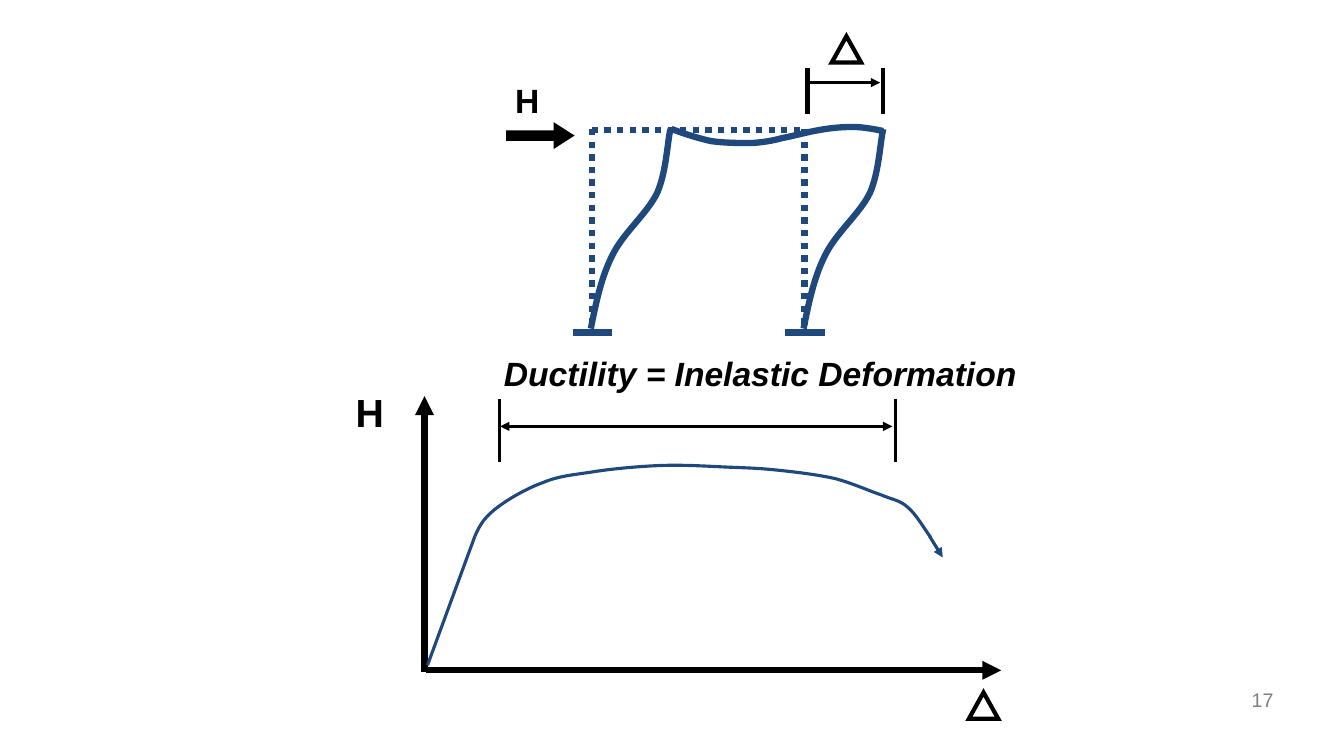
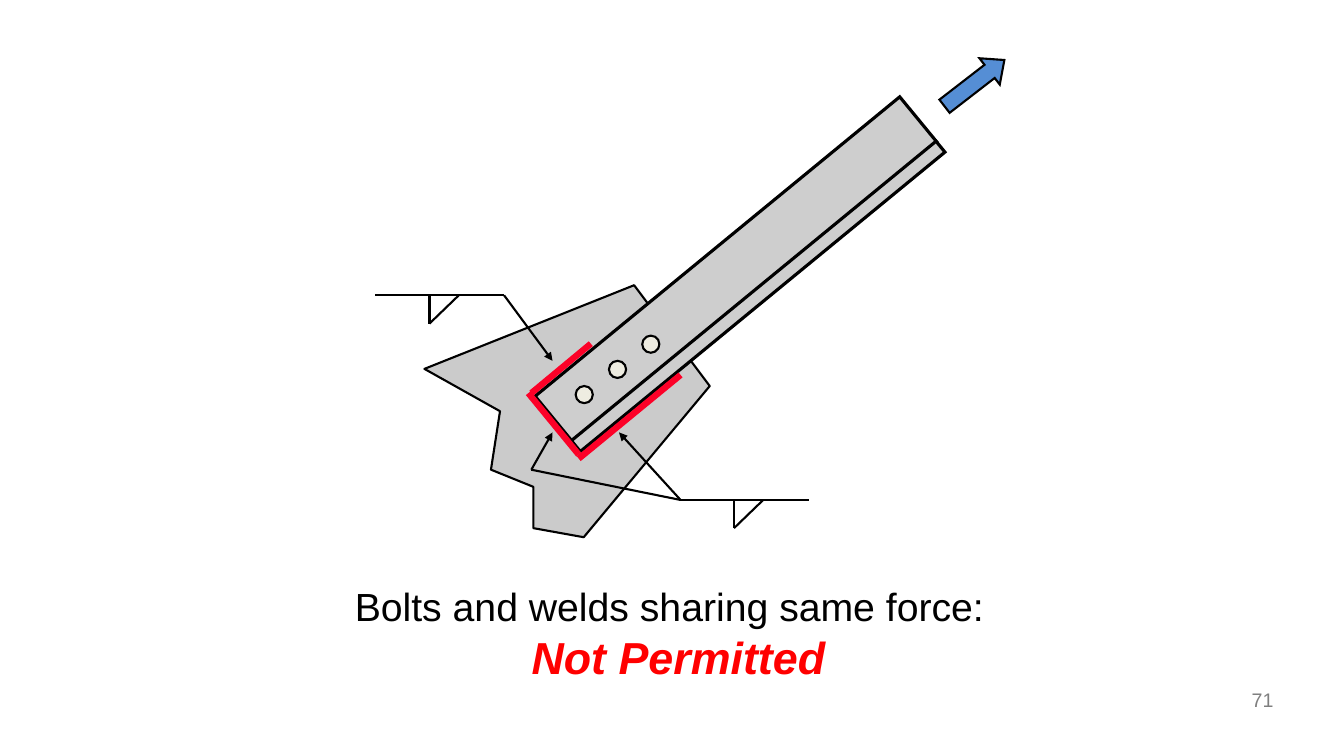
from lxml import etree
from pptx import Presentation
from pptx.dml.color import RGBColor
from pptx.enum.dml import MSO_LINE
from pptx.enum.shapes import MSO_CONNECTOR, MSO_SHAPE
from pptx.enum.text import MSO_ANCHOR, PP_ALIGN
from pptx.oxml.ns import qn
from pptx.util import Inches, Pt

STRAIGHT = MSO_CONNECTOR.STRAIGHT
RECT, OVAL = MSO_SHAPE.RECTANGLE, MSO_SHAPE.OVAL
DELTA, ARROW = MSO_SHAPE.ISOSCELES_TRIANGLE, MSO_SHAPE.RIGHT_ARROW
DOTS = MSO_LINE.ROUND_DOT
TOP, MIDDLE = MSO_ANCHOR.TOP, MSO_ANCHOR.MIDDLE
LEFT, CENTER, RIGHT = PP_ALIGN.LEFT, PP_ALIGN.CENTER, PP_ALIGN.RIGHT

BLACK = RGBColor(0x00, 0x00, 0x00)
NAVY = RGBColor(0x1F, 0x49, 0x7D)
BLUE = RGBColor(0x55, 0x8E, 0xD5)
PLATE = RGBColor(0xCB, 0xCB, 0xCB)
STEEL = RGBColor(0xCE, 0xCE, 0xCE)
CREAM = RGBColor(0xEE, 0xEC, 0xE1)
WELD = RGBColor(0xFC, 0x01, 0x28)
RED = RGBColor(0xFF, 0x00, 0x00)
GRAY = RGBColor(0x7F, 0x7F, 0x7F)

# Pens: colour and width in points
FRAME, CURVE, SEAM = (NAVY, 4.5), (NAVY, 2.25), (WELD, 4.5)
AXIS, BOLD, MID, THIN = (BLACK, 4.5), (BLACK, 3), (BLACK, 2.25), (BLACK, 1.5)


class Deck:
    font = "Arial"

    def __init__(self):
        self.prs = Presentation()
        self.prs.slide_width, self.prs.slide_height = Inches(13.33), Inches(7.5)
        self.shapes = None

    def page(self, number):
        self.shapes = self.prs.slides.add_slide(self.prs.slide_layouts[6]).shapes
        self.text((9.62, 6.74, 3.11, 0.4), [(number, 14, GRAY, {}, RIGHT)], MIDDLE)

    def text(self, box, rows, anchor=TOP):
        """Add a text box; each row is words, size, colour, style, alignment."""
        frame = self.shapes.add_textbox(*map(Inches, box)).text_frame
        frame.word_wrap, frame.vertical_anchor = True, anchor
        for i, (words, size, color, style, align) in enumerate(rows):
            para = frame.add_paragraph() if i else frame.paragraphs[0]
            para.text, para.alignment = words, align
            values = {"name": self.font, "size": Pt(size), **style}
            for key, value in values.items():
                setattr(para.font, key, value)
            para.font.color.rgb = color

    def stroke(self, item, pen, extras=()):
        """Set the pen, then append extra line elements in schema order."""
        item.line.color.rgb, item.line.width = pen[0], Pt(pen[1])
        for tag, values in extras:
            etree.SubElement(item.line._get_or_add_ln(), qn(tag), values)

    def line(self, start, end, pen, ends="", dash=None):
        """Draw a line; ends holds 'h' and 't' for head and tail arrows."""
        item = self.shapes.add_connector(STRAIGHT, *map(Inches, (*start, *end)))
        if dash:
            item.line.dash_style = dash
        tags = {"h": "a:headEnd", "t": "a:tailEnd"}
        self.stroke(item, pen, [(tags[e], {"type": "triangle"}) for e in ends])
        etree.SubElement(item.element.spPr, qn("a:effectLst"))

    def paint(self, item, fill, pen, join):
        item.shadow.inherit = False
        if fill is None:
            item.fill.background()
        else:
            item.fill.solid()
            item.fill.fore_color.rgb = fill
        self.stroke(item, pen, [join])

    def shape(self, kind, box, fill, pen, turn=0, adj=()):
        item = self.shapes.add_shape(kind, *map(Inches, box))
        item.rotation = turn
        for i, value in enumerate(adj):
            item.adjustments[i] = value
        self.paint(item, fill, pen, ("a:miter", {"lim": "800000"}))

    def outline(self, points, pen, fill=None):
        spots = [(Inches(x), Inches(y)) for x, y in points]
        maker = self.shapes.build_freeform(*spots[0])
        maker.add_line_segments(spots[1:], close=fill is not None)
        item = maker.convert_to_shape()
        self.paint(item, fill, pen, ("a:round", {}))
        return item

    def curve(self, points, pen):
        """Draw cubic curves: a start point, then three points per curve."""
        steps = list(self.outline(points, pen).element.iter(qn("a:lnTo")))
        for i in range(0, len(steps), 3):
            bend = etree.Element(qn("a:cubicBezTo"))
            steps[i].addprevious(bend)
            for step in steps[i:i + 3]:
                bend.append(step[0])
                step.getparent().remove(step)

    def delta(self, x, y):
        self.shape(DELTA, (x, y, 0.29, 0.26), None, BOLD)

    def fillet(self, x, y):
        """Draw a weld symbol with its reference line starting at x, y."""
        self.line((x, y), (x + 1.28, y), THIN)
        self.line((x + 0.54, y), (x + 0.54, y + 0.28), THIN)
        self.line((x + 0.54, y + 0.28), (x + 0.83, y), THIN)


def sway(deck):
    """Draw the swaying frame and its load."""
    span = 2.11
    for dx in (0, span):
        deck.line((5.87 + dx, 1.28), (5.87 + dx, 3.31), FRAME, dash=DOTS)
    deck.line((5.87, 1.29), (5.87 + span, 1.29), FRAME, dash=DOTS)
    column = [(5.86, 3.26), (5.91, 3.01), (5.96, 2.76), (6.07, 2.54),
              (6.18, 2.31), (6.42, 2.12), (6.52, 1.91),
              (6.61, 1.7), (6.62, 1.4), (6.65, 1.28)]
    for dx in (0, span):
        deck.line((5.68 + dx, 3.3), (6.07 + dx, 3.3), FRAME)
        deck.curve([(x + dx, y) for x, y in column], FRAME)
    deck.curve([(6.66, 1.28), (6.79, 1.33), (6.92, 1.37), (7.05, 1.4),
                (7.19, 1.42), (7.34, 1.42), (7.46, 1.42),
                (7.58, 1.41), (7.65, 1.4), (7.76, 1.37),
                (7.87, 1.35), (8.01, 1.31), (8.13, 1.29),
                (8.24, 1.27), (8.35, 1.26), (8.46, 1.26),
                (8.57, 1.26), (8.71, 1.29), (8.76, 1.3)], FRAME)
    for x in (8.01, 8.76):
        deck.line((x, 0.67), (x, 1.13), BOLD)
    deck.line((8.01, 0.82), (8.73, 0.82), MID, "t")
    deck.delta(8.25, 0.36)
    deck.shape(ARROW, (5.04, 1.25, 0.62, 0.19), BLACK, BOLD, adj=(0.33, 0.78))
    deck.text((5.01, 0.74, 0.66, 0.51), [("H", 24, BLACK, {"bold": True}, LEFT)])


def graph(deck):
    """Draw the load and displacement curve."""
    deck.line((4.23, 6.65), (9.93, 6.65), AXIS, "t")
    deck.line((4.21, 6.67), (4.21, 3.93), AXIS, "t")
    deck.text((3.43, 3.8, 0.66, 0.57), [("H", 28, BLACK, {"bold": True}, LEFT)])
    deck.delta(9.61, 6.87)
    deck.line((4.24, 6.6), (4.71, 5.32), CURVE)
    deck.curve([(4.71, 5.32), (4.75, 5.23), (4.79, 5.15), (4.9, 5.06),
                (5.01, 4.97), (5.21, 4.85), (5.38, 4.79),
                (5.54, 4.72), (5.7, 4.71), (5.89, 4.68),
                (6.08, 4.65), (6.31, 4.63), (6.51, 4.62),
                (6.72, 4.61), (6.92, 4.62), (7.12, 4.63),
                (7.31, 4.64), (7.47, 4.64), (7.67, 4.66),
                (7.87, 4.68), (8.12, 4.71), (8.29, 4.75),
                (8.47, 4.8), (8.62, 4.87), (8.74, 4.91),
                (8.86, 4.96), (8.92, 4.96), (9, 5.03),
                (9.08, 5.09), (9.19, 5.28), (9.23, 5.33)], CURVE)
    deck.line((9.22, 5.32), (9.35, 5.53), CURVE, "t")
    for x in (4.95, 8.88):
        deck.line((x, 4.58), (x, 3.96), MID)
    deck.line((4.96, 4.23), (8.85, 4.23), MID, "ht")
    deck.text((4.9, 3.45, 6.23, 0.5), [("Ductility = Inelastic Deformation", 24,
              BLACK, {"bold": True, "italic": True}, LEFT)])


def joint(deck):
    """Draw the brace joined to its plate by bolts and welds."""
    deck.outline([(7.04, 3.83), (6.29, 2.83), (4.21, 3.66), (4.96, 4.08),
                  (4.87, 4.66), (5.29, 4.83), (5.29, 5.24), (5.79, 5.33)],
                 THIN, PLATE)
    for box in ((4.96, 2.38, 4.68, 0.58), (5.18, 2.87, 4.68, 0.14)):
        deck.shape(RECT, box, STEEL, MID, 320.6)
    deck.shape(ARROW, (9.29, 0.66, 0.75, 0.33), BLUE, THIN, 322.3, (0.5, 0.56))
    for i in range(3):
        bolt = (5.71 + 0.33 * i, 3.83 - 0.25 * i, 0.17, 0.17)
        deck.shape(OVAL, bolt, CREAM, THIN)
    for start, end in (((5.86, 3.41), (5.27, 3.9)), ((5.24, 3.9), (5.74, 4.51)),
                       ((6.75, 3.72), (5.74, 4.55))):
        deck.line(start, end, SEAM)
    deck.fillet(6.74, 4.96)
    deck.line((6.75, 4.96), (6.14, 4.29), THIN, "t")
    deck.line((6.75, 4.96), (5.27, 4.66), THIN)
    deck.line((5.27, 4.66), (5.48, 4.29), THIN, "t")
    deck.fillet(3.72, 2.93)
    deck.line((5, 2.93), (5.48, 3.58), THIN, "t")
    deck.text((3.42, 5.73, 6.62, 1.11), [
        ("Bolts and welds sharing same force:", 28, BLACK, {}, LEFT),
        ("Not Permitted", 32, RED, {"bold": True, "italic": True}, CENTER)])


def main():
    deck = Deck()
    deck.page("17")
    sway(deck)
    graph(deck)
    deck.page("71")
    joint(deck)
    deck.prs.save("out.pptx")


if __name__ == "__main__":
    main()
